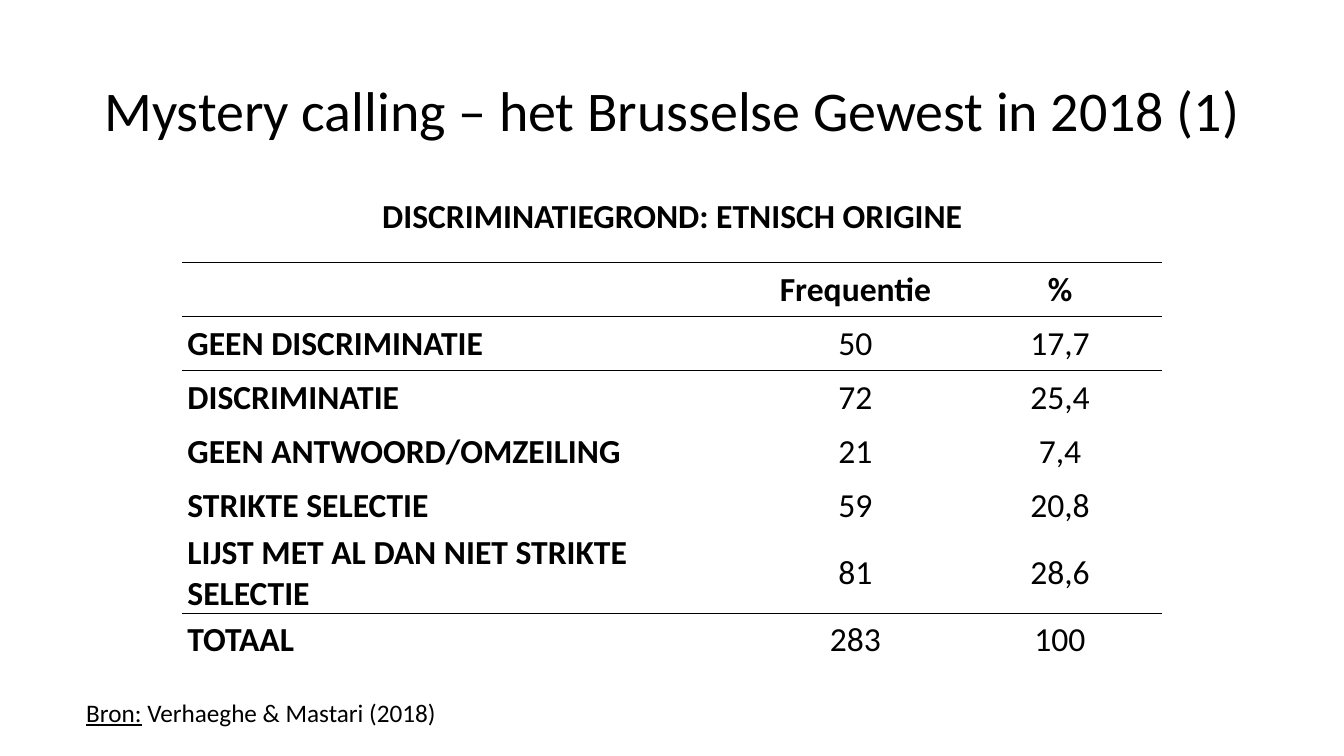
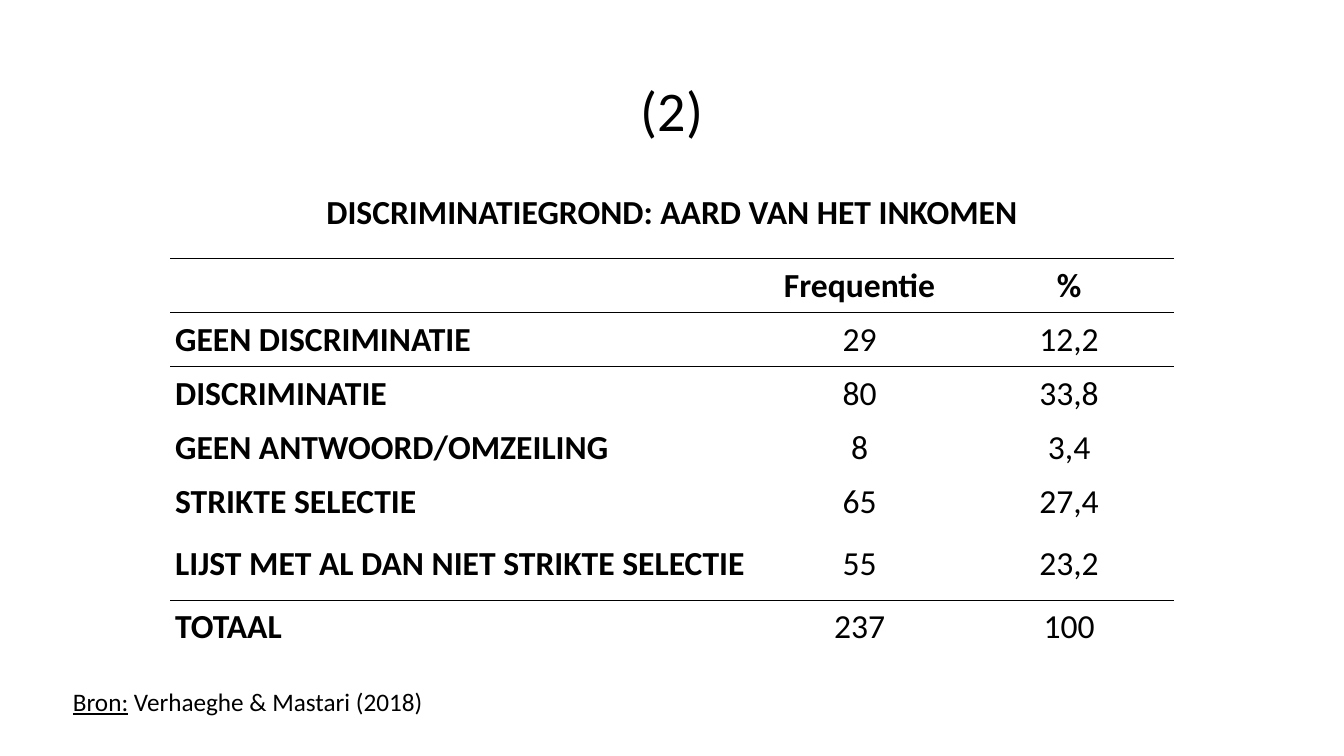
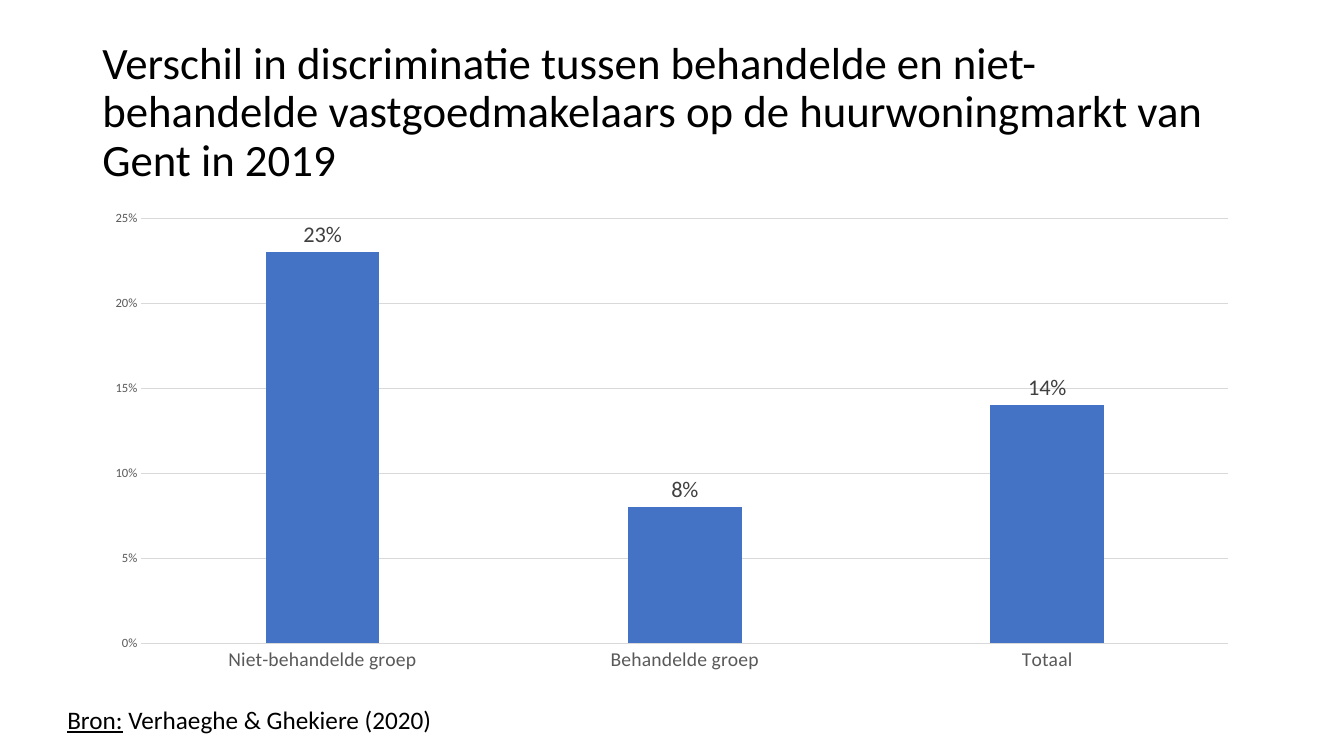
from dataclasses import dataclass
from typing import NamedTuple

from lxml import etree
from pptx import Presentation
from pptx.chart import data as chart_data
from pptx.dml.color import RGBColor
from pptx.enum import chart as chart_enum, text
from pptx.oxml import ns
from pptx.util import Pt


@dataclass(frozen=True)
class Theme:
    font: str = "Calibri"
    ink: str = "000000"
    bar: str = "4472C4"
    grid: str = "D9D9D9"
    axis_text: str = "595959"
    label_text: str = "404040"
    title_size: float = 40
    long_title_size: float = 32
    table_size: float = 24
    source_size: float = 18
    value_label_size: float = 16
    category_size: float = 14
    tick_size: float = 9
    rule_width: float = 1
    grid_width: float = 0.75


class Box(NamedTuple):
    """Left, top, width and height in points."""
    left: float
    top: float
    width: float
    height: float

    def lengths(self):
        return [Pt(length) for length in self]


THEME = Theme()
TITLE_BOX = Box(66, 29, 828, 104)
CHART_BOX = Box(66, 144, 828, 342.5)

HEADINGS = ("", "Frequentie", "%")
OUTCOMES = (
    "GEEN DISCRIMINATIE",
    "DISCRIMINATIE",
    "GEEN ANTWOORD/OMZEILING",
    "STRIKTE SELECTIE",
    "LIJST MET AL DAN NIET STRIKTE SELECTIE",
    "TOTAAL",
)
ROW_HEIGHTS = (65.5, 38.6, 38.6, 38.6, 38.6, 38.6, 51.1, 38.6)
RULED_ROWS = {0, 1, 2, 6}  # rows with a line below them
LABEL_SHARE = 0.5825

CENTRE, LEFT = text.PP_ALIGN.CENTER, text.PP_ALIGN.LEFT
MIDDLE = text.MSO_ANCHOR.MIDDLE

TABLE_SLIDES = (
    {
        "title": "Mystery calling – het Brusselse Gewest in 2018 (1)",
        "caption": "DISCRIMINATIEGROND: ETNISCH ORIGINE",
        "counts": ("50", "72", "21", "59", "81", "283"),
        "shares": ("17,7", "25,4", "7,4", "20,8", "28,6", "100"),
        "table_box": Box(130.25, 122.25, 700, sum(ROW_HEIGHTS)),
        "source_box": Box(54.5, 494.5, 511, 29),
    },
    {
        "title": "(2)",
        "caption": "DISCRIMINATIEGROND: AARD VAN HET INKOMEN",
        "counts": ("29", "80", "8", "65", "55", "237"),
        "shares": ("12,2", "33,8", "3,4", "27,4", "23,2", "100"),
        "table_box": Box(121.5, 119.25, 717, sum(ROW_HEIGHTS)),
        "source_box": Box(45, 486.5, 475, 29),
    },
)


def apply(target, values):
    for name, value in values.items():
        setattr(target, name, value)


def format_font(font, size, color=THEME.ink, **values):
    apply(font, {"name": THEME.font, "size": Pt(size), **values})
    font.color.rgb = RGBColor.from_string(color)


def add_text(slide, box, runs, size, paragraph_format, frame_format):
    """Write one paragraph from (words, underline) runs."""
    frame = slide.shapes.add_textbox(*box.lengths()).text_frame
    apply(frame, {"word_wrap": True, **frame_format})
    paragraph = frame.paragraphs[0]
    apply(paragraph, paragraph_format)
    for words, underline in runs:
        run = paragraph.add_run()
        run.text = words
        format_font(run.font, size, underline=underline)


def add_title(slide, box, words, size, alignment):
    add_text(slide, box, [(words, False)], size,
             {"alignment": alignment, "line_spacing": 0.9},
             {"vertical_anchor": MIDDLE})


def add_source(slide, box, authors):
    add_text(slide, box, [("Bron:", True), (f" {authors}", False)],
             THEME.source_size, {"alignment": LEFT}, {})


def set_borders(cell, ruled_sides):
    """Draw a line on the given sides (T, B) and clear the others."""
    properties = cell._tc.get_or_add_tcPr()
    for position, side in enumerate("LRTB"):
        line = etree.Element(ns.qn(f"a:ln{side}"))
        if side in ruled_sides:
            line.set("w", str(Pt(THEME.rule_width)))
            fill = etree.SubElement(line, ns.qn("a:solidFill"))
            etree.SubElement(fill, ns.qn("a:srgbClr"), val=THEME.ink)
        else:
            etree.SubElement(line, ns.qn("a:noFill"))
        properties.insert(position, line)


def fill_cell(cell, words, bold, alignment, ruled_sides):
    apply(cell, {"margin_left": Pt(3.6), "margin_right": Pt(3.6),
                 "margin_top": 0, "margin_bottom": 0,
                 "vertical_anchor": MIDDLE})
    cell.fill.background()
    set_borders(cell, ruled_sides)
    if words:
        paragraph = cell.text_frame.paragraphs[0]
        paragraph.alignment = alignment
        run = paragraph.add_run()
        run.text = words
        format_font(run.font, THEME.table_size, bold=bold)


def add_results_table(slide, box, caption, counts, shares):
    rows = [(caption, "", ""), HEADINGS, *zip(OUTCOMES, counts, shares)]
    table = slide.shapes.add_table(len(rows), len(HEADINGS), *box.lengths()).table
    apply(table, {"first_row": False, "horz_banding": False})
    number_share = (1 - LABEL_SHARE) / 2
    for column, share in zip(table.columns, (LABEL_SHARE, number_share, number_share)):
        column.width = Pt(box.width * share)
    for row, height in zip(table.rows, ROW_HEIGHTS):
        row.height = Pt(height)

    for row_index, row in enumerate(rows):
        ruled_sides = ("T" if row_index - 1 in RULED_ROWS else "") + (
            "B" if row_index in RULED_ROWS else "")
        is_heading = row_index < 2
        for column_index, words in enumerate(row):
            is_label = column_index == 0
            fill_cell(table.cell(row_index, column_index), words,
                      bold=is_heading or is_label,
                      alignment=LEFT if is_label and not is_heading else CENTRE,
                      ruled_sides=ruled_sides)
    table.cell(0, 0).merge(table.cell(0, len(HEADINGS) - 1))


def format_line(line, color, width):
    line.color.rgb = RGBColor.from_string(color)
    line.width = Pt(width)


def add_discrimination_chart(slide, box):
    values = chart_data.CategoryChartData(number_format="0%")
    values.categories = ("Niet-behandelde groep", "Behandelde groep", "Totaal")
    values.add_series("Series 1", (0.23, 0.08, 0.14))
    chart = slide.shapes.add_chart(
        chart_enum.XL_CHART_TYPE.COLUMN_CLUSTERED, *box.lengths(), values).chart
    apply(chart, {"has_legend": False, "has_title": False})
    format_font(chart.font, 10)

    categories, scale = chart.category_axis, chart.value_axis
    for axis, size in ((categories, THEME.category_size), (scale, THEME.tick_size)):
        apply(axis, {"major_tick_mark": chart_enum.XL_TICK_MARK.NONE,
                     "minor_tick_mark": chart_enum.XL_TICK_MARK.NONE})
        format_font(axis.tick_labels.font, size, THEME.axis_text)
    format_line(categories.format.line, THEME.grid, THEME.grid_width)
    apply(scale, {"minimum_scale": 0, "maximum_scale": 0.25, "major_unit": 0.05,
                  "has_major_gridlines": True})
    format_line(scale.major_gridlines.format.line, THEME.grid, THEME.grid_width)
    scale.format.line.fill.background()

    plot = chart.plots[0]
    apply(plot, {"gap_width": 219, "overlap": -27,
                 "vary_by_categories": False, "has_data_labels": True})
    labels = plot.data_labels
    apply(labels, {"show_value": True,
                   "position": chart_enum.XL_LABEL_POSITION.OUTSIDE_END})
    format_font(labels.font, THEME.value_label_size, THEME.label_text)
    for numbers in (scale.tick_labels, labels):
        apply(numbers, {"number_format": "0%", "number_format_is_linked": False})
    bars = plot.series[0].format.fill
    bars.solid()
    bars.fore_color.rgb = RGBColor.from_string(THEME.bar)


def add_table_slide(slide, title, caption, counts, shares, table_box, source_box):
    add_title(slide, TITLE_BOX, title, THEME.title_size, CENTRE)
    add_results_table(slide, table_box, caption, counts, shares)
    add_source(slide, source_box, "Verhaeghe & Mastari (2018)")


def add_chart_slide(slide):
    add_title(slide, TITLE_BOX,
              "Verschil in discriminatie tussen behandelde en niet-behandelde "
              "vastgoedmakelaars op de huurwoningmarkt van Gent in 2019",
              THEME.long_title_size, LEFT)
    add_discrimination_chart(slide, CHART_BOX)
    add_source(slide, Box(41, 499.5, 455, 29), "Verhaeghe & Ghekiere (2020)")


def main():
    presentation = Presentation()
    apply(presentation, {"slide_width": Pt(960), "slide_height": Pt(540)})
    blank = presentation.slide_layouts[6]
    for content in TABLE_SLIDES:
        add_table_slide(presentation.slides.add_slide(blank), **content)
    add_chart_slide(presentation.slides.add_slide(blank))
    presentation.save("out.pptx")


if __name__ == "__main__":
    main()
